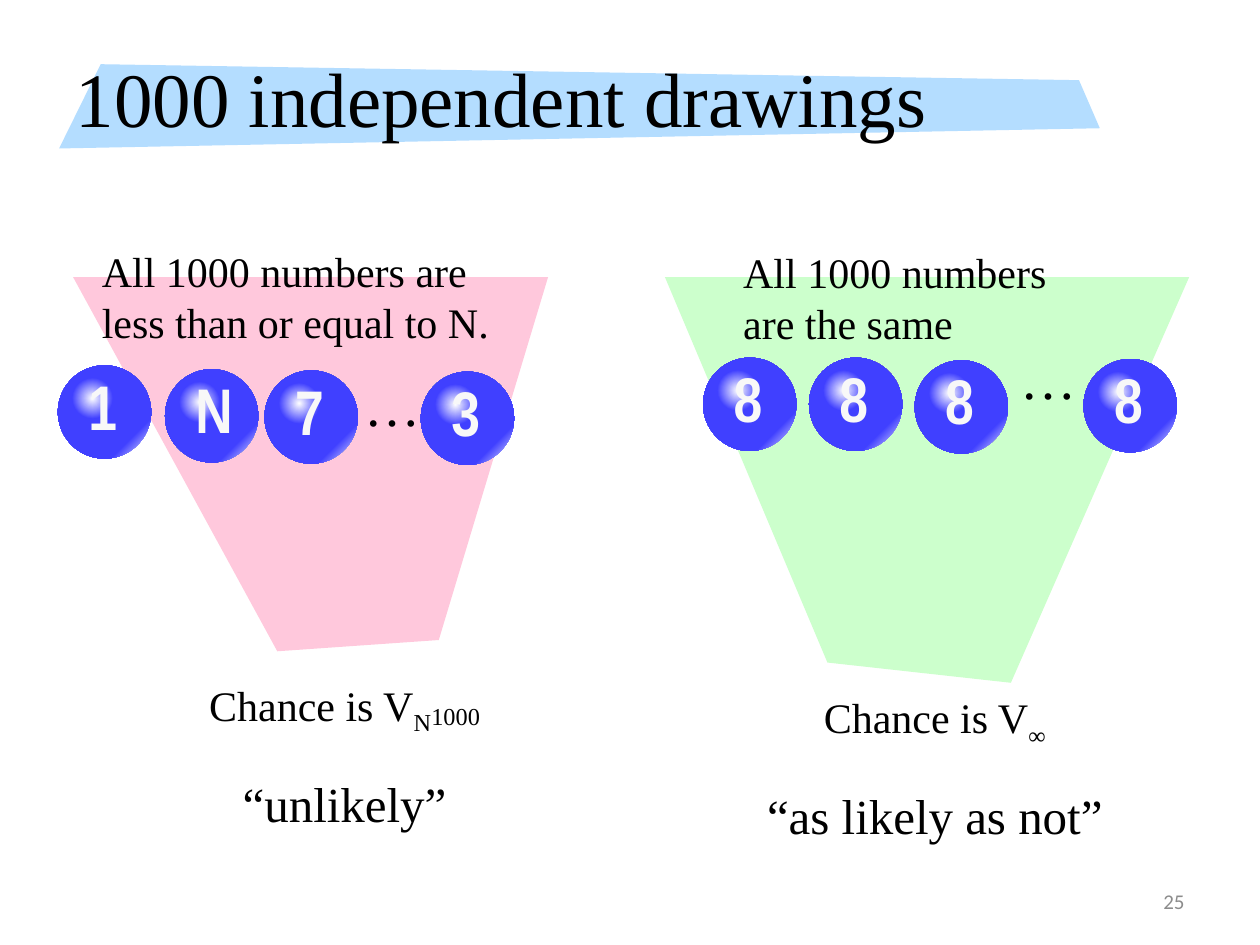
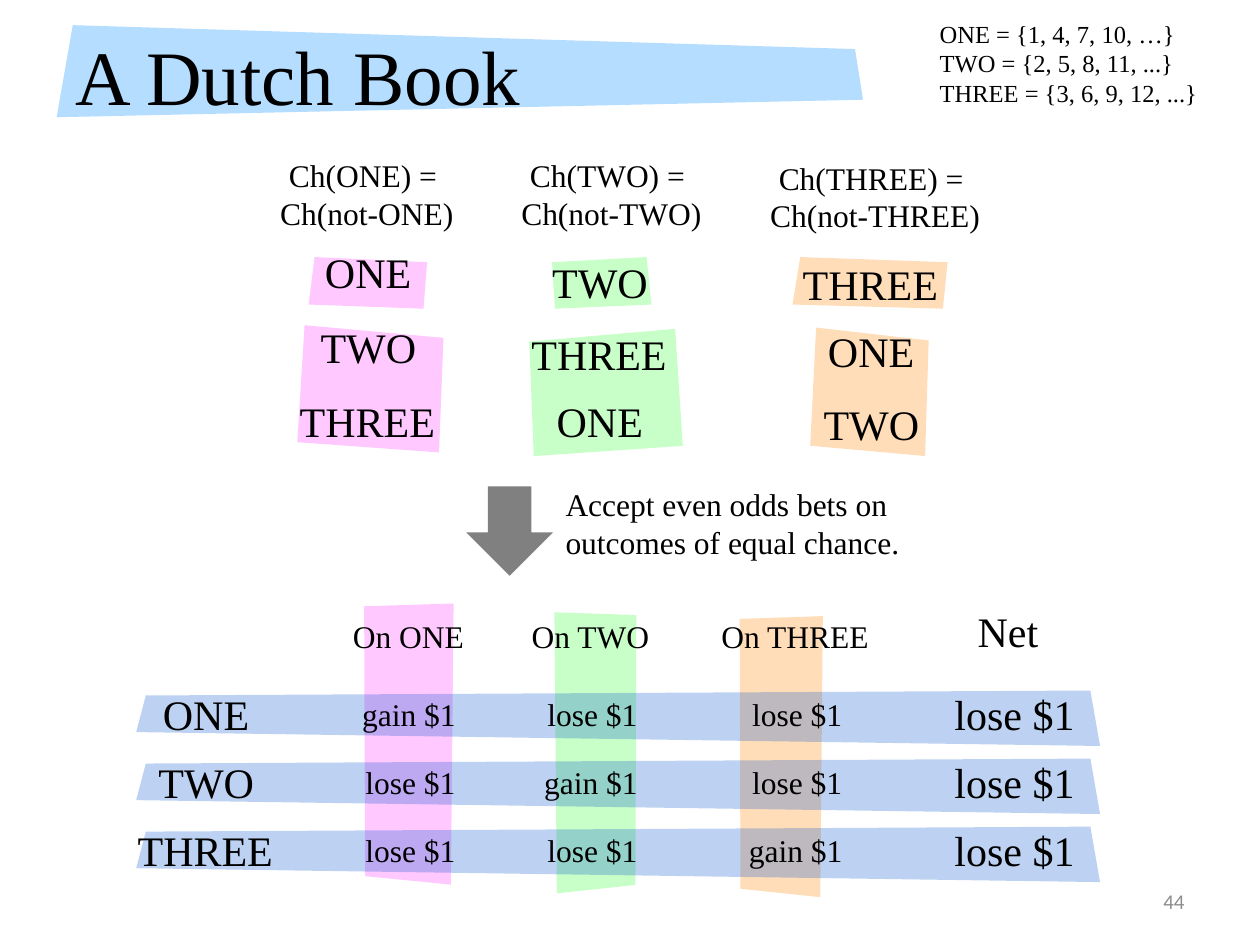
import collections

import lxml.etree
import pptx
import pptx.dml.color
import pptx.enum.shapes
import pptx.enum.text
import pptx.oxml
import pptx.oxml.ns
import pptx.util

Pt = pptx.util.Pt
Align = pptx.enum.text.PP_ALIGN
Anchor = pptx.enum.text.MSO_ANCHOR
Shapes = pptx.enum.shapes.MSO_SHAPE
Box = collections.namedtuple("Box", "left top width height")

SERIF = "Times New Roman"
BLACK, BALL_BLUE, WHITE = "000000", "4040FF", "FFFFFF"
TITLE_BLUE, ROW_BLUE, ARROW_GREY = "B4DDFF", "0054CF", "808080"
PINK, GREEN, ORANGE = "FFC8FF", "C8FFC8", "FFDDB9"

# Corners as fractions of the box that holds the outline
TAG = [(0.05, 0), (1, 0.1), (0.97, 1), (0, 0.92)]
STRIP = [(0, 0.01), (1, 0), (0.97, 1), (0.01, 0.97)]
ROW_BAND = [(0, 0.75), (1, 1), (0.99, 0), (0.01, 0.09)]

# Widths of the short labels, in ems
LABEL_EMS = {"ONE": 2.1, "TWO": 2.31, "THREE": 3.3, "lose $1": 2.88, "gain $1": 3.08,
             "On ONE": 3.56, "On TWO": 3.76, "On THREE": 4.72, "Net": 1.47, "…": 1.0}
OUTCOMES = ["ONE", "TWO", "THREE"]


def color(hex_string):
    return pptx.dml.color.RGBColor.from_string(hex_string)


def inside(box, left, top, width, height):
    """Box given relative to the corner of another box."""
    return Box(box.left + left, box.top + top, width, height)


def set_attributes(target, values):
    for name, value in values.items():
        setattr(target, name, value)


def place(shape, box):
    set_attributes(shape, {name: Pt(value) for name, value in box._asdict().items()})


def format_run(run, size, name=SERIF, hex_color=BLACK, bold=None, **xml_attributes):
    set_attributes(run.font, {"name": name, "size": Pt(size), "bold": bold})
    run.font.color.rgb = color(hex_color)
    for attribute, value in xml_attributes.items():
        run._r.get_or_add_rPr().set(attribute, str(value))


def add_text(slide, box, paragraphs, align=Align.LEFT, wrap=True, anchor=Anchor.TOP,
             space_before=0, **style):
    """Each paragraph is a string or a list of (text, style changes) runs."""
    shape = slide.shapes.add_textbox(*map(Pt, box))
    frame = shape.text_frame
    set_attributes(frame, {
        "word_wrap": wrap, "vertical_anchor": anchor,
        "auto_size": pptx.enum.text.MSO_AUTO_SIZE.NONE if anchor == Anchor.MIDDLE
        else pptx.enum.text.MSO_AUTO_SIZE.SHAPE_TO_FIT_TEXT})
    for index, content in enumerate(paragraphs):
        paragraph = frame.add_paragraph() if index else frame.paragraphs[0]
        paragraph.alignment = align
        if index and space_before:
            paragraph.space_before = Pt(space_before)
        for text, changes in [(content, {})] if isinstance(content, str) else content:
            run = paragraph.add_run()
            run.text = text
            format_run(run, **{**style, **changes})


def add_label(slide, text, center, top, size):
    width = LABEL_EMS[text] * size + 14.4
    add_text(slide, Box(center - width / 2, top, width, size * 1.2 + 7.2), [text],
             wrap=False, size=size)


def paint(shape, hex_color):
    shape.shadow.inherit = False
    shape.line.fill.background()
    shape.fill.solid()
    shape.fill.fore_color.rgb = color(hex_color)


def add_slanted(slide, box, corners, hex_color, mirrored=False, opacity=None):
    points = [(Pt(box.left + box.width * (1 - x if mirrored else x)),
               Pt(box.top + box.height * y)) for x, y in corners]
    builder = slide.shapes.build_freeform(*points[0])
    builder.add_line_segments(points[1:], close=True)
    shape = builder.convert_to_shape()
    paint(shape, hex_color)
    if opacity is not None:
        fill_color = shape._element.spPr.find(".//" + pptx.oxml.ns.qn("a:srgbClr"))
        alpha = lxml.etree.SubElement(fill_color, pptx.oxml.ns.qn("a:alpha"))
        alpha.set("val", str(opacity * 1000))


def add_title(slide, text, band_box, corners, title_top):
    add_slanted(slide, band_box, corners, TITLE_BLUE)
    title = slide.shapes.title
    place(title, Box(36, title_top, 602.6, 67.7))
    title.text_frame.text = text
    title.text_frame.vertical_anchor = Anchor.MIDDLE
    paragraph = title.text_frame.paragraphs[0]
    paragraph.alignment = Align.LEFT
    format_run(paragraph.runs[0], 44)
    slide.shapes._spTree.append(title._element)  # in front of its band


def add_slide_number(slide, number):
    add_text(slide, Box(516.2, 500.4, 167.8, 28.8), [number], Align.RIGHT,
             anchor=Anchor.MIDDLE, size=12, name="Calibri", hex_color="8C8C8C")


def add_radial_circle(slide, box, stops, focus):
    """Circle with a radial gradient; focus is its (left, top, right, bottom) in percent."""
    shape = slide.shapes.add_shape(Shapes.OVAL, *map(Pt, box))
    paint(shape, BALL_BLUE)
    properties = shape._element.spPr
    stop_xml = "".join(f'<a:gs pos="{position * 1000}"><a:srgbClr val="{hex_color}"/></a:gs>'
                       for position, hex_color in stops)
    sides = " ".join(f'{side}="{value * 1000}"' for side, value in zip("ltrb", focus))
    gradient = pptx.oxml.parse_xml(
        f'<a:gradFill rotWithShape="1" {pptx.oxml.ns.nsdecls("a")}><a:gsLst>{stop_xml}</a:gsLst>'
        f'<a:path path="circle"><a:fillToRect {sides}/></a:path></a:gradFill>')
    properties.replace(properties.find(pptx.oxml.ns.qn("a:solidFill")), gradient)


def add_ball(slide, box, text):
    add_radial_circle(slide, box, [(0, BALL_BLUE), (78, BALL_BLUE), (100, WHITE)],
                      (0, 0, 100, 100))
    add_radial_circle(slide, inside(box, 6.8, 5.8, 26, 26),
                      [(0, WHITE), (64, BALL_BLUE), (100, BALL_BLUE)], (50, 50, 50, 50))
    add_text(slide, inside(box, 10.3, -2.6, 39.6, 51.1), [text], size=36,
             name="Arial Narrow", hex_color="F8F8F8", bold=True, spc=150)


def add_drawing_panel(slide, box, panel):
    add_slanted(slide, box, panel["corners"], panel["color"])
    left, top, width = panel["verdict_at"]
    add_text(slide, inside(box, left, top, width, 85),
             [[("Chance is V", {})] + panel["subscripts"], [(panel["verdict"], {"size": 28})]],
             Align.CENTER, wrap=False, space_before=21, size=24)
    left, top, width = panel["heading_at"]
    add_text(slide, inside(box, left, top, width, 65.5), [panel["heading"]], size=24)
    for text, left, top in panel["balls"]:
        add_ball(slide, inside(box, left, top, 53.3, 53.3), text)
    center, top = panel["dots_at"]
    add_label(slide, "…", box.left + center, box.top + top, 32)


def build_drawings_slide(slide):
    subscript = {"baseline": -25000}
    add_drawing_panel(slide, Box(41.8, 158.4, 271.4, 213.8), {
        "color": "FFC8DC", "corners": [(0, 0), (1, 0), (0.77, 0.97), (0.43, 1)],
        "heading": "All 1000 numbers are less than or equal to N.",
        "heading_at": (9.3, -21.6, 242.6),
        "balls": [("1", -8.7, 50.4), ("N", 52.5, 52.6), ("7", 109.4, 53.3), ("3", 198.7, 54)],
        "dots_at": (182.5, 49.7),
        "subscripts": [("N", subscript), ("1000", {"baseline": -10000})],
        "verdict": "“unlikely”", "verdict_at": (66.9, 226.1, 176.4)})
    add_drawing_panel(slide, Box(380, 158.4, 299.5, 231.8), {
        "color": "CCFFCC", "corners": [(0, 0), (1, 0), (0.66, 1), (0.31, 0.95)],
        "heading": "All 1000 numbers are the same",
        "heading_at": (37.6, -20.9, 218.9),
        "balls": [("8", 21.8, 46), ("8", 82.3, 46), ("8", 142.7, 47.5), ("8", 239.2, 46.8)],
        "dots_at": (219.4, 34.6),
        "subscripts": [("∞", subscript)],
        "verdict": "“as likely as not”", "verdict_at": (49.8, 233.3, 208.8)})
    add_title(slide, "1000 independent drawings", Box(33.8, 36.7, 594.7, 48.2),
              [(0.04, 0), (0.98, 0.19), (1, 0.76), (0, 1)], 21.6)
    add_slide_number(slide, "25")


def add_equal_chance_column(slide, box, outcome, hex_color, tags, labels, shift, mirrored=False):
    for tag in tags:
        add_slanted(slide, inside(box, *tag), TAG, hex_color, mirrored)
    add_text(slide, box, [f"Ch({outcome}) =", f" Ch(not-{outcome})"], Align.CENTER, size=18)
    for text, top in labels:
        add_label(slide, text, box.left + box.width / 2 + shift, box.top + top, 24)


def add_step(slide, box):
    arrow = slide.shapes.add_shape(Shapes.DOWN_ARROW, *map(Pt, inside(box, 0, 4.3, 49.7, 51.1)))
    paint(arrow, ARROW_GREY)
    add_text(slide, inside(box, 49.7, 0, 211.7, 51.1),
             ["Accept even odds bets on outcomes of equal chance."], size=18)


def add_bets_grid(slide, box):
    strips = [(344.9, 9.4, 47.5, 160.6, ORANGE), (239, 7.2, 46.8, 160.6, GREEN),
              (130.3, 2.2, 51.1, 160.6, PINK)]
    for left, top, width, height, hex_color in strips:
        add_slanted(slide, inside(box, left, top, width, height), STRIP, hex_color,
                    mirrored=hex_color == GREEN)
    centers = [157, 261, 378]
    row_tops = [box.top + 51.9 + 38.9 * row for row in range(3)]
    for top in row_tops:
        add_slanted(slide, Box(box.left, top, 550.8, 31.7), ROW_BAND, ROW_BLUE, opacity=26)
    for outcome, center in zip(OUTCOMES, centers):
        add_label(slide, f"On {outcome}", box.left + center - 1, box.top + 6.5, 18)
    add_label(slide, "Net", box.left + 498.6, box.top, 24)
    for row, (outcome, top) in enumerate(zip(OUTCOMES, row_tops)):
        add_label(slide, outcome, box.left + 40.6, top - 4.5, 24)
        for column, center in enumerate(centers):
            add_label(slide, "gain $1" if row == column else "lose $1",
                      box.left + center, top - 0.9, 18)
        add_label(slide, "lose $1", box.left + 502.3, top - 4.8, 24)


def build_dutch_book_slide(slide):
    add_title(slide, "A Dutch Book", Box(32.4, 14.4, 460.8, 52.6),
              [(0.02, 0), (0.99, 0.26), (1, 0.81), (0, 1)], 8.6)
    add_slide_number(slide, "44")
    add_text(slide, Box(529.9, 7.2, 162.7, 58.3),
             ["ONE = {1, 4, 7, 10, …}", "TWO = {2, 5, 8, 11, ...}", "THREE = {3, 6, 9, 12, ...}"],
             wrap=False, size=14)
    add_equal_chance_column(
        slide, Box(139.7, 85.7, 135.4, 51.1), "ONE", PINK,
        [(36.7, 61.2, 67.7, 29.5), (30.2, 100.1, 83.5, 72.7)],
        [("ONE", 51.8), ("TWO", 94.3), ("THREE", 136.8)], 3.6)
    add_equal_chance_column(
        slide, Box(279.4, 85.7, 135.4, 51.1), "TWO", GREEN,
        [(36, 61.2, 56.9, 29.5), (23, 102.2, 87.8, 72.7)],
        [("TWO", 57.6), ("THREE", 98.6), ("ONE", 136.8)], -3.7, mirrored=True)
    add_equal_chance_column(
        slide, Box(419, 87.1, 157.7, 51.1), "THREE", ORANGE,
        [(33.9, 59.8, 88.6, 29.5), (44, 100.1, 67.7, 73.4)],
        [("THREE", 56.9), ("ONE", 95.1), ("TWO", 136.8)], 0.6)
    add_bets_grid(slide, Box(77.8, 342.7, 551.5, 171))
    add_step(slide, Box(266.4, 273.6, 261.4, 55.4))


def main():
    presentation = pptx.Presentation()
    set_attributes(presentation, {"slide_width": Pt(720), "slide_height": Pt(540)})
    title_only = presentation.slide_layouts[5]
    for build in (build_drawings_slide, build_dutch_book_slide):
        build(presentation.slides.add_slide(title_only))
    presentation.save("out.pptx")


if __name__ == "__main__":
    main()
